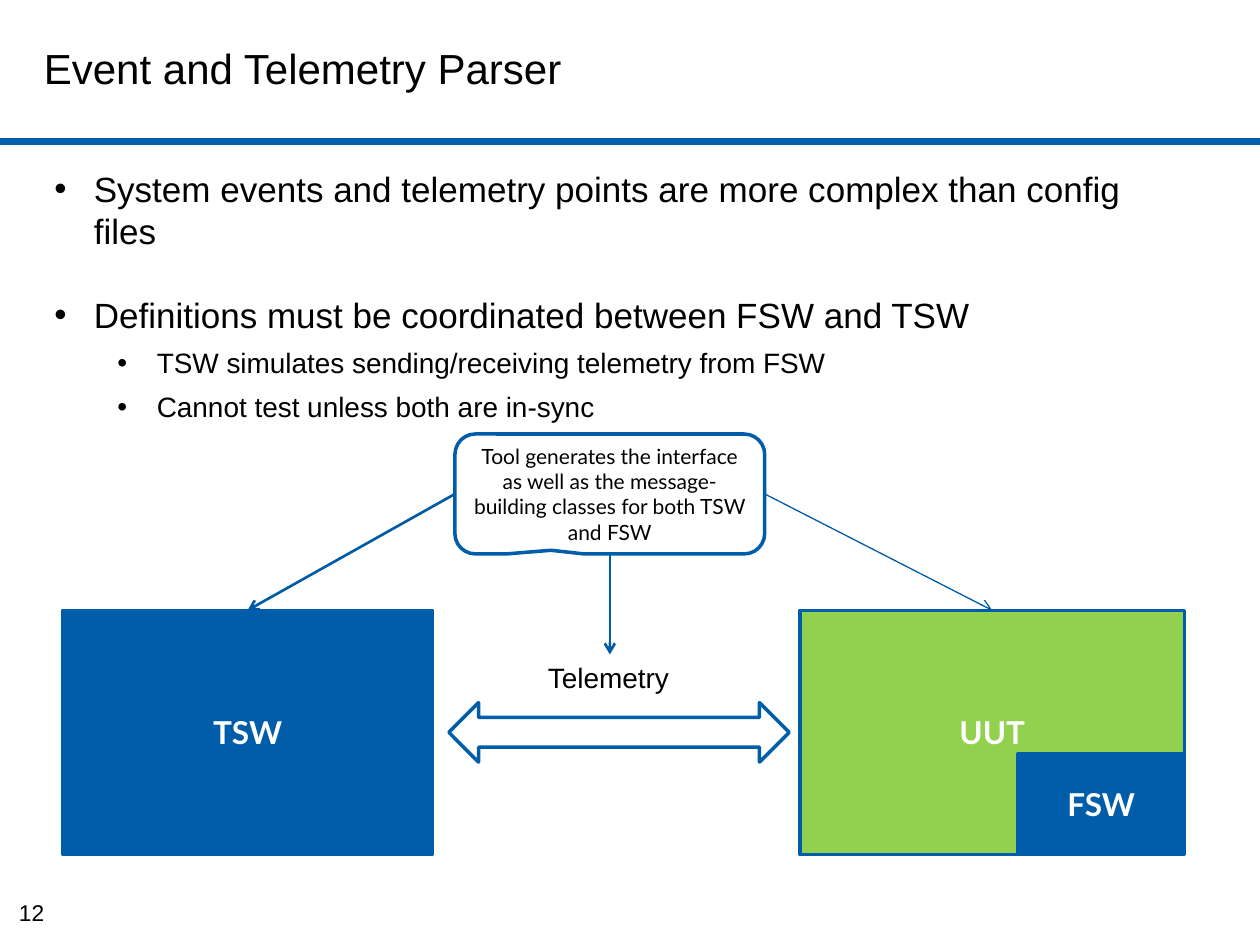
"""Builds the Event and Telemetry Parser slide."""
import pptx
import pptx.dml.color
import pptx.enum.shapes
import pptx.enum.text
import pptx.oxml
import pptx.oxml.ns
import pptx.util

Pt = pptx.util.Pt
SHAPE = pptx.enum.shapes.MSO_SHAPE
ALIGN = pptx.enum.text.PP_ALIGN
ANCHOR = pptx.enum.text.MSO_ANCHOR
BLUE, LINK, GREEN, BLACK, WHITE = "005DAA", "005BA6", "92D050", "000000", "FFFFFF"
TOP, LEFT, BOTTOM, RIGHT = range(4)


def rgb(value):
    return pptx.dml.color.RGBColor.from_string(value)


def add_xml(parent, tag, attrs=""):
    ns = pptx.oxml.ns.nsdecls("a")
    parent.append(pptx.oxml.parse_xml(f"<a:{tag} {ns} {attrs}/>"))


class Deck:
    def __init__(self):
        self.prs = pptx.Presentation()
        self.prs.slide_width, self.prs.slide_height = Pt(720), Pt(540)
        self.s = self.prs.slides.add_slide(self.prs.slide_layouts[6])

    def style(self, p, size, color=BLACK, font="Arial", bold=False):
        for r in p.runs:
            r.font.size, r.font.name, r.font.bold = Pt(size), font, bold
            r.font.color.rgb = rgb(color)

    def text(self, box, text, size, align=ALIGN.LEFT, anchor=ANCHOR.TOP, wrap=True):
        tf = self.s.shapes.add_textbox(*map(Pt, box)).text_frame
        tf.word_wrap, tf.vertical_anchor = wrap, anchor
        p = tf.paragraphs[0]
        p.text, p.alignment = text, align
        self.style(p, size)

    def bullets(self, box, items):
        tf = self.s.shapes.add_textbox(*map(Pt, box)).text_frame
        tf.word_wrap = True
        for i, (level, text) in enumerate(items):
            p = tf.add_paragraph() if i else tf.paragraphs[0]
            p.text, p.level = text, level
            p.space_before = Pt((6 if level else 24) if i else 0)
            pPr = p._p.get_or_add_pPr()
            pPr.set("marL", str(Pt(22.5 + 36 * level)))
            pPr.set("indent", str(-Pt(22.5)))
            add_xml(pPr, "buFont", 'typeface="Arial"')
            add_xml(pPr, "buChar", 'char="•"')
            self.style(p, 16 if level else 20)

    def shape(self, kind, box, fill=None, text="", size=18, color=WHITE, bold=True):
        sp = self.s.shapes.add_shape(kind, *map(Pt, box))
        sp.shadow.inherit = False
        if fill:
            sp.fill.solid()
            sp.fill.fore_color.rgb = rgb(fill)
        else:
            sp.fill.background()
        sp.line.color.rgb, sp.line.width = rgb(BLUE), Pt(2)
        tf = sp.text_frame
        tf.text, tf.word_wrap, tf.vertical_anchor = text, True, ANCHOR.MIDDLE
        tf.paragraphs[0].alignment = ALIGN.CENTER
        self.style(tf.paragraphs[0], size, color, "Lato", bold)
        return sp

    def line(self, start, end, width, color, arrow=False):
        cn = self.s.shapes.add_connector(
            pptx.enum.shapes.MSO_CONNECTOR.STRAIGHT, *map(Pt, start + end))
        cn.line.color.rgb, cn.line.width = rgb(color), Pt(width)
        if arrow:
            add_xml(cn.line._get_or_add_ln(), "tailEnd", 'type="arrow"')
        add_xml(cn._element.spPr, "effectLst")
        return cn


def main():
    deck = Deck()
    deck.line((0, 81), (720, 81), 3.75, BLUE)
    deck.text((18, 5.5, 528, 66), "Event and Telemetry Parser", 24, anchor=ANCHOR.MIDDLE)
    deck.bullets((24, 92, 660, 356), [
        (0, "System events and telemetry points are more complex than config files"),
        (0, "Definitions must be coordinated between FSW and TSW"),
        (1, "TSW simulates sending/receiving telemetry from FSW"),
        (1, "Cannot test unless both are in-sync"),
    ])
    deck.text((2, 510, 32, 24), "12", 13, ALIGN.CENTER, wrap=False)

    tsw = deck.shape(SHAPE.RECTANGLE, (36, 348.75, 211, 139.5), BLUE, "TSW")
    uut = deck.shape(SHAPE.RECTANGLE, (457, 348.75, 220, 139.5), GREEN, "UUT")
    deck.shape(SHAPE.RECTANGLE, (581.5, 431, 95.5, 57.25), BLUE, "FSW")
    deck.shape(SHAPE.LEFT_RIGHT_ARROW, (256.5, 401.5, 194.5, 34))
    deck.text((306, 374, 84, 26.5), "Telemetry", 16, wrap=False)
    tool = deck.shape(
        SHAPE.ROUNDED_RECTANGULAR_CALLOUT, (260, 248, 177, 68.5), None,
        "Tool generates the interface as well as the message-building classes "
        "for both TSW and FSW", 12, BLACK, False)
    for i, value in enumerate((-0.19, 0.47, 0.17)):
        tool.adjustments[i] = value

    for side, end, width, target in (
            (LEFT, (141.5, 348.75), 1.5, tsw),
            (BOTTOM, (348.5, 374), 1.5, None),
            (RIGHT, (567, 348.75), 0.75, uut)):
        cn = deck.line((348.5, 282), end, width, LINK, arrow=True)
        cn.begin_connect(tool, side)
        if target:
            cn.end_connect(target, TOP)
    deck.prs.save("out.pptx")


if __name__ == "__main__":
    main()
